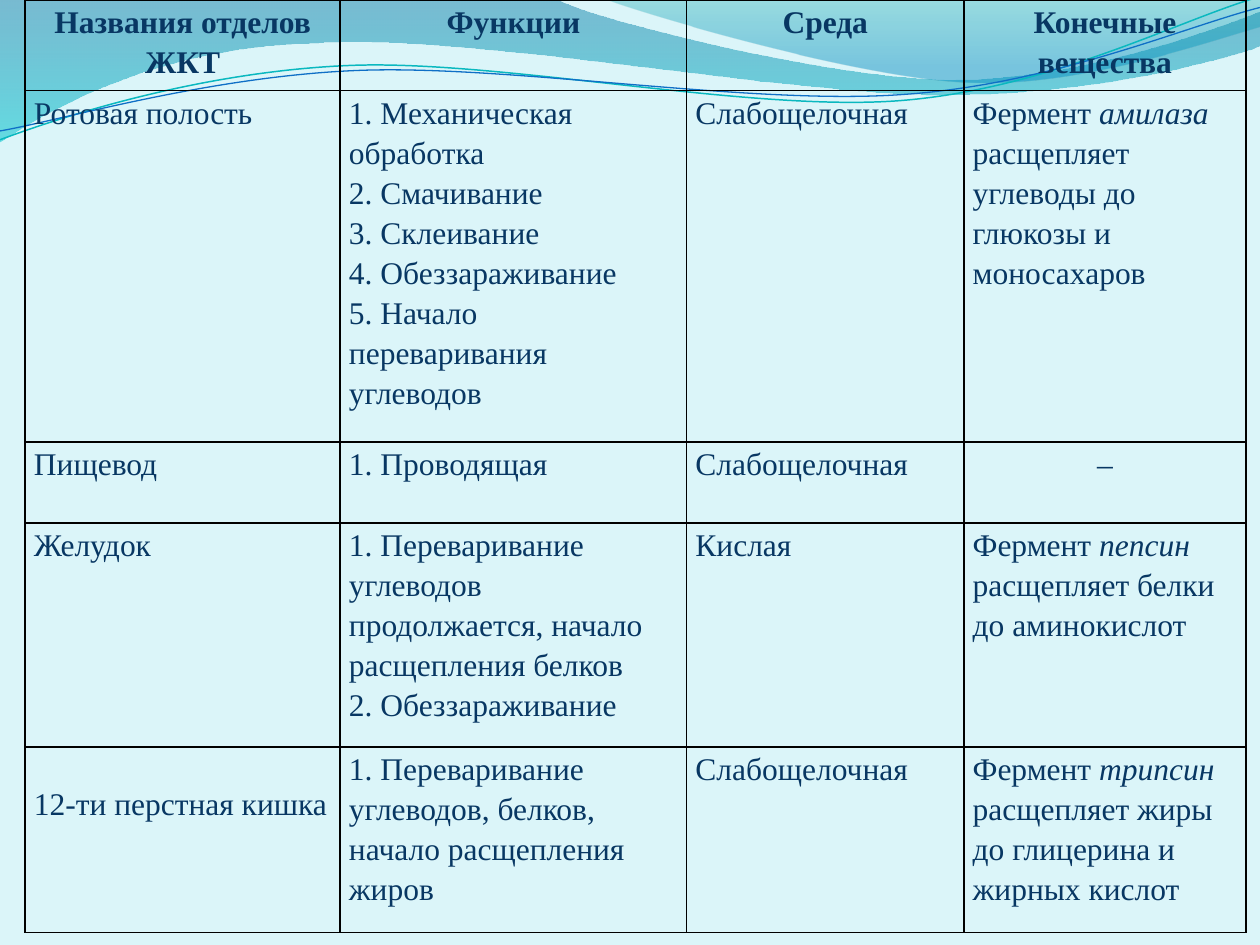
from math import cos, radians, sin

from lxml.etree import SubElement
from pptx import Presentation
from pptx.dml.color import RGBColor
from pptx.enum.text import PP_ALIGN as Align
from pptx.oxml import parse_xml
from pptx.oxml.ns import nsdecls, qn
from pptx.util import Inches, Pt

COLORS = {
    "background": "DBF5F9", "text": "083763", "border": "000000",
    "wave_blue": "0074A1", "wave_cyan": "00C6CF",
    "crest_teal": "00A1A9", "crest_blue": "008BBF",
    "line_teal": "0AB8BF", "line_blue": "0F6FC6",
}
FONT = "Times New Roman"
TILT = -2.7

# Outlines relative to the header box: one pair is a corner, three pairs are a Bézier segment.
BIG_WAVE = [
    [(0, 0)], [(4.4, -0.01)], [(4.76, 0.17), (6.64, 0.63), (7.58, 0.63)],
    [(8.53, 0.63), (9.58, 0.26), (10, 0.09)], [(10.01, 0.36)],
    [(9.83, 0.44), (8.7, 0.76), (7.46, 0.75)], [(6.22, 0.75), (3.82, 0.28), (2.57, 0.34)],
    [(1.29, 0.36), (0.46, 0.83), (-0.01, 1.13)],
]
CREST = [
    [(4.79, -0.01)], [(5.09, 0.11), (6.82, 0.62), (7.69, 0.65)],
    [(8.56, 0.69), (9.61, 0.32), (10, 0.21)], [(10, 0)],
]
TEAL_LINE = [
    [(0, 1.11)], [(0.48, 0.93), (1.58, 0.57), (2.77, 0.52)],
    [(3.95, 0.47), (5.93, 0.89), (7.13, 0.8)], [(8.33, 0.71), (9.38, 0.15), (9.98, -0.02)],
]
BLUE_LINE = [
    [(0, 1.04)], [(0.47, 0.96), (1.64, 0.61), (2.83, 0.56)],
    [(4.03, 0.51), (5.97, 0.84), (7.17, 0.75)], [(8.36, 0.67), (9.41, 0.21), (10, 0.06)],
]

COLUMN_WIDTHS = [2.5, 2.75, 2.2, 2.24]
ROW_HEIGHTS = [0.72, 2.79, 0.64, 1.78, 1.47]
LOWERED_CELL = (4, 0)
# A cell is a list of paragraphs; *stars* enclose italics, a leading # asks for a number.
ROWS = [
    [["Названия отделов ЖКТ"], ["Функции"], ["Среда"], ["Конечные вещества"]],
    [["Ротовая полость"],
     ["1. Механическая обработка", "2. Смачивание", "3. Склеивание",
      "4. Обеззараживание", "5. Начало переваривания углеводов"],
     ["Слабощелочная"],
     ["Фермент *амилаза* расщепляет углеводы до глюкозы и моносахаров"]],
    [["Пищевод"], ["#Проводящая"], ["Слабощелочная"], ["–"]],
    [["Желудок"],
     ["1. Переваривание углеводов продолжается, начало расщепления белков",
      "2. Обеззараживание"],
     ["Кислая"],
     ["Фермент *пепсин* расщепляет белки до аминокислот"]],
    [["12-ти перстная кишка"],
     ["1. Переваривание углеводов, белков, начало расщепления жиров"],
     ["Слабощелочная"],
     ["Фермент *трипсин *расщепляет жиры до глицерина и жирных кислот"]],
]


def color(name):
    return RGBColor.from_string(COLORS[name])


def level(outline, angle):
    """Turn an outline back by its tilt, around the middle of its two ends."""
    (x0, y0), (x1, y1) = outline[0][-1], outline[-1][-1]
    middle_x, middle_y = (x0 + x1) / 2, (y0 + y1) / 2
    cosine, sine = cos(radians(-angle)), sin(radians(-angle))
    return [[(middle_x + (x - middle_x) * cosine - (y - middle_y) * sine,
              middle_y + (x - middle_x) * sine + (y - middle_y) * cosine)
             for x, y in segment] for segment in outline]


def add_outline(shapes, left, top, outline, close):
    segments = [[(left + Inches(x), top + Inches(y)) for x, y in segment]
                for segment in outline]
    corners = [segment[-1] for segment in segments]
    builder = shapes.build_freeform(*corners[0])
    builder.add_line_segments(corners[1:], close=close)
    shape = builder.convert_to_shape()
    shape.shadow.inherit = False
    # Bend the straight sides that have control points.
    for side, segment in zip(list(shape._element.iter(qn("a:lnTo"))), segments[1:]):
        if len(segment) == 3:
            side.tag = qn("a:cubicBezTo")
            for index, (x, y) in enumerate(segment[:2]):
                point = side.makeelement(
                    qn("a:pt"), {"x": str(x - shape.left), "y": str(y - shape.top)})
                side.insert(index, point)
    return shape


def add_wave(shapes, left, top, outline, stops):
    """Add a borderless wave; each stop is (position, colour name, opacity in percent)."""
    shape = add_outline(shapes, left, top, outline, close=True)
    shape.line.fill.background()
    shape.fill.gradient()
    shape.fill.gradient_angle = 270
    for stop, (position, name, _) in zip(shape.fill.gradient_stops, stops):
        stop.position = position
        stop.color.rgb = color(name)
    solid_colors = shape._element.spPr.iter(qn("a:srgbClr"))
    for element, (_, _, opacity) in zip(list(solid_colors), stops):
        SubElement(element, qn("a:alpha"), val=str(opacity * 1000))


def add_curve(shapes, left, top, outline, name, width):
    shape = add_outline(shapes, left, top, level(outline, TILT), close=False)
    shape.rotation = TILT
    shape.fill.background()
    shape.line.color.rgb = color(name)
    shape.line.width = Pt(width)


def add_header_waves(slide, left, top):
    shapes = slide.shapes
    add_wave(shapes, left, top, BIG_WAVE, [(0, "wave_blue", 45), (1, "wave_cyan", 55)])
    add_wave(shapes, left, top, CREST, [(0, "crest_teal", 30), (0.8, "crest_blue", 45)])
    lines = shapes.add_group_shape().shapes
    add_curve(lines, left, top, TEAL_LINE, "line_teal", 0.85)
    add_curve(lines, left, top, BLUE_LINE, "line_blue", 0.75)


def set_borders(cell):
    properties = cell._tc.get_or_add_tcPr()
    for index, side in enumerate(("lnL", "lnR", "lnT", "lnB")):
        properties.insert(index, parse_xml(
            f'<a:{side} {nsdecls("a")} w="{Pt(1)}"><a:solidFill>'
            f'<a:srgbClr val="{COLORS["border"]}"/></a:solidFill></a:{side}>'))


def number_paragraph(paragraph):
    properties = paragraph._p.get_or_add_pPr()
    properties.set("marL", str(Inches(0.25)))
    properties.set("indent", str(-Inches(0.25)))
    SubElement(properties, qn("a:buFont"), typeface=FONT)
    SubElement(properties, qn("a:buAutoNum"), type="arabicPeriod")


def write_paragraph(paragraph, text, bold):
    paragraph.line_spacing = 1.15
    paragraph.alignment = Align.CENTER if bold or text == "–" else Align.LEFT
    if text.startswith("#"):
        number_paragraph(paragraph)
    for index, part in enumerate(text.lstrip("#").split("*")):
        run = paragraph.add_run()
        run.text = part
        font = run.font
        font.name, font.size = FONT, Pt(18)
        font.bold, font.italic = bold, index % 2 == 1
        font.color.rgb = color("text")


def fill_cell(cell, texts, bold, top_margin):
    cell.fill.background()
    set_borders(cell)
    cell.margin_left = cell.margin_right = Inches(0.07)
    cell.margin_top, cell.margin_bottom = top_margin, 0
    frame = cell.text_frame
    for index, text in enumerate(texts):
        paragraph = frame.add_paragraph() if index else frame.paragraphs[0]
        write_paragraph(paragraph, text, bold)


def add_digestion_table(slide, left, top):
    table = slide.shapes.add_table(
        len(ROWS), len(COLUMN_WIDTHS), left, top,
        Inches(sum(COLUMN_WIDTHS)), Inches(sum(ROW_HEIGHTS))).table
    table.first_row = table.horz_banding = False
    for column, width in zip(table.columns, COLUMN_WIDTHS):
        column.width = Inches(width)
    for row_index, (row, height) in enumerate(zip(table.rows, ROW_HEIGHTS)):
        row.height = Inches(height)
        for column_index, texts in enumerate(ROWS[row_index]):
            lowered = (row_index, column_index) == LOWERED_CELL
            fill_cell(row.cells[column_index], texts, bold=row_index == 0,
                      top_margin=Inches(0.28 if lowered else 0))


def main():
    presentation = Presentation()
    presentation.slide_width, presentation.slide_height = Inches(10), Inches(7.5)
    slide = presentation.slides.add_slide(presentation.slide_layouts[6])
    slide.background.fill.solid()
    slide.background.fill.fore_color.rgb = color("background")
    add_header_waves(slide, Inches(0), Inches(0))
    add_digestion_table(slide, Inches(0.2), Inches(0))
    presentation.save("out.pptx")


if __name__ == "__main__":
    main()
